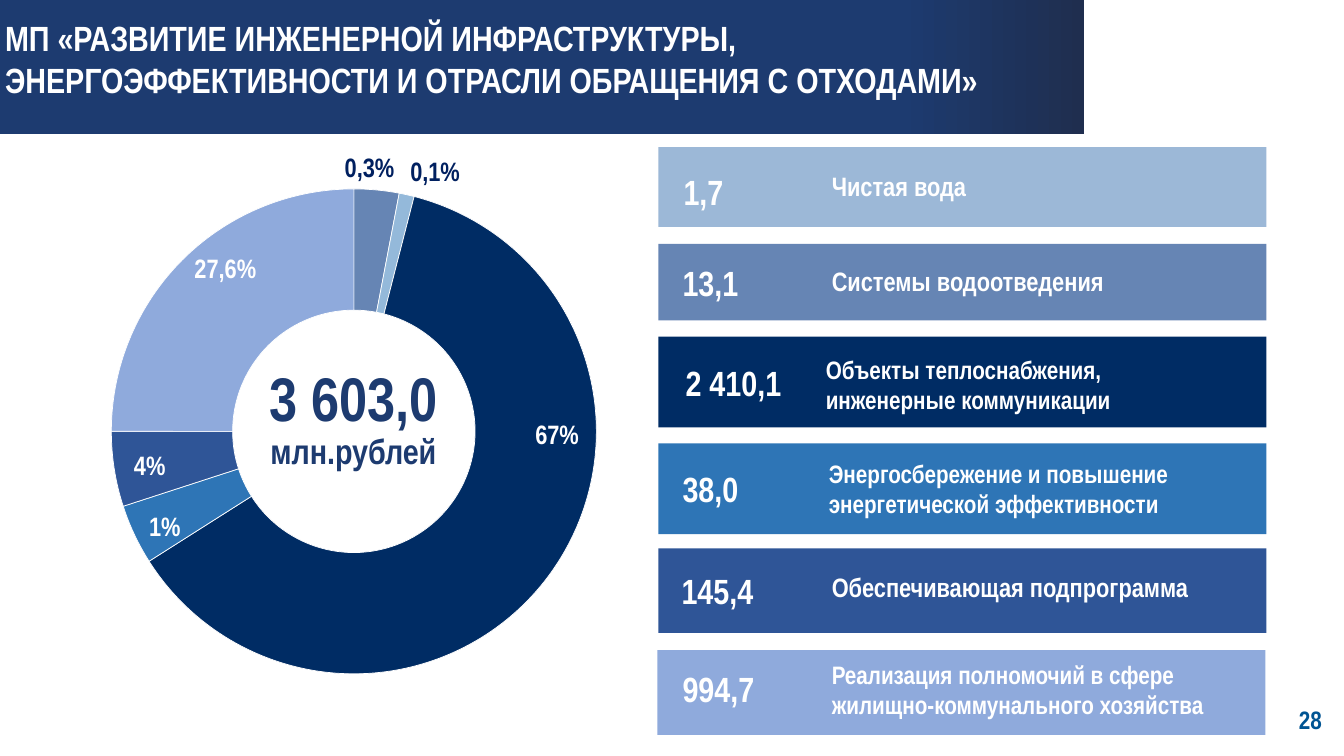
from dataclasses import dataclass

from lxml import etree
from pptx import Presentation
from pptx.chart.data import CategoryChartData
from pptx.dml.color import RGBColor
from pptx.enum.chart import XL_CHART_TYPE as CHART
from pptx.enum.shapes import MSO_SHAPE as SHAPE
from pptx.enum.text import MSO_ANCHOR as ANCHOR, PP_ALIGN as ALIGN
from pptx.util import Inches, Pt


@dataclass(frozen=True)
class Theme:
    font: str = "Arial Narrow"
    chart_font: str = "Calibri"
    white: str = "FFFFFF"
    blue: str = "1D3B70"
    shade: str = "1F2E4F"
    ink: str = "002060"
    page: str = "005493"
    mist: str = "9CB8D7"
    sky: str = "94B9DA"
    steel: str = "6685B4"
    navy: str = "002C64"
    azure: str = "2E75B6"
    royal: str = "2F5597"
    lilac: str = "8FAADC"
    total: int = 44
    head: int = 25
    label: int = 19
    small: int = 18


T = Theme()
rgb = RGBColor.from_string


def put_text(text, box, size=T.label, color=T.white, align=ALIGN.LEFT,
             anchor=ANCHOR.TOP, wrap=True, sp=None):
    x, y, w, h = map(Inches, box)
    if sp is None:
        sp = slide.shapes.add_textbox(x, y, w, h)
    sp.left, sp.top, sp.width, sp.height = x, y, w, h
    tf = sp.text_frame
    tf.word_wrap = wrap
    tf.vertical_anchor = anchor
    tf.margin_left = tf.margin_right = tf.margin_top = tf.margin_bottom = Inches(0.05)
    tf.text = text
    for p in tf.paragraphs:
        p.alignment = align
        p.space_before = Pt(0)
        for r in p.runs:
            r.font.name = T.font
            r.font.size = Pt(size)
            r.font.bold = True
            r.font.color.rgb = rgb(color)


def add_bar(x, y, w, h):
    sp = slide.shapes.add_shape(SHAPE.RECTANGLE, Inches(x), Inches(y), Inches(w), Inches(h))
    sp.shadow.inherit = False
    sp.line.fill.background()
    return sp


prs = Presentation()
prs.slide_width, prs.slide_height = Inches(13.33), Inches(7.5)
slide = prs.slides.add_slide(prs.slide_layouts[5])

banner = add_bar(0, 0, 10.75, 1.33)
banner.fill.gradient()
banner.fill.gradient_angle = 0
for stop, position, color in zip(banner.fill.gradient_stops, (0.83, 1), (T.blue, T.shade)):
    stop.position = position
    stop.color.rgb = rgb(color)

title = slide.shapes.title
banner.element.addnext(title.element)
put_text("МП «РАЗВИТИЕ ИНЖЕНЕРНОЙ ИНФРАСТРУКТУРЫ,\n"
         "ЭНЕРГОЭФФЕКТИВНОСТИ И ОТРАСЛИ ОБРАЩЕНИЯ С ОТХОДАМИ»",
         (0, 0.11, 13.23, 0.94), T.head, sp=title)

data = CategoryChartData()
data.categories = ["1", "2", "3", "4", "5", "6"]
data.add_series("Series 1", (3, 1, 62, 4, 5, 25))
chart = slide.shapes.add_chart(CHART.DOUGHNUT, Inches(1.08), Inches(1.85),
                               Inches(4.86), Inches(4.86), data).chart
chart.has_legend = False
chart.has_title = False
chart.font.name = T.chart_font
chart.font.size = Pt(10)
chart.font.color.rgb = rgb(T.white)
plot = chart.plots[0]
plot.vary_by_categories = True
for i, color in enumerate((T.steel, T.sky, T.navy, T.azure, T.royal, T.lilac)):
    fmt = plot.series[0].points[i].format
    fmt.fill.solid()
    fmt.fill.fore_color.rgb = rgb(color)
    fmt.line.color.rgb = rgb(T.white)
    fmt.line.width = Pt(0.5)

area = chart.element.find(".//{*}plotArea")
area.find(".//{*}holeSize").set("val", "70")
for old in area.findall("{*}layout"):
    area.remove(old)
ns = "{http://schemas.openxmlformats.org/drawingml/2006/chart}"
layout = etree.Element(ns + "layout")
manual = etree.SubElement(layout, ns + "manualLayout")
for tag, val in (("layoutTarget", "inner"), ("xMode", "edge"), ("yMode", "edge"),
                 ("x", "0.005"), ("y", "0.005"), ("w", "0.99"), ("h", "0.99")):
    etree.SubElement(manual, ns + tag).set("val", val)
area.insert(0, layout)

put_text("3 603,0", (1.83, 3.52, 3.35, 0.84), T.total, T.blue, ALIGN.CENTER)
put_text("млн.рублей", (1.83, 4.21, 3.35, 0.52), T.head, T.blue, ALIGN.CENTER)

shares = (
    ("67%", 5.12, 4.1, T.white),
    ("1%", 1.23, 5.01, T.white),
    ("4%", 1.08, 4.4, T.white),
    ("27,6%", 1.83, 2.45, T.white),
    ("0,3%", 3.26, 1.45, T.ink),
    ("0,1%", 3.91, 1.49, T.ink),
)
for share, x, y, color in shares:
    put_text(share, (x, y, 0.81, 0.42), color=color, align=ALIGN.CENTER)

programmes = (
    (6.53, 1.46, 0.79, T.mist, "1,7", 6.73, 1.64,
     "Чистая вода", 8.2, 1.45, 0.79, T.label),
    (6.53, 2.42, 0.76, T.steel, "13,1", 6.72, 2.54,
     "Системы водоотведения", 8.2, 2.48, 0.61, T.label),
    (6.53, 3.34, 0.9, T.navy, "2 410,1", 6.75, 3.53,
     "Объекты теплоснабжения, инженерные коммуникации", 8.14, 3.36, 0.91, T.small),
    (6.53, 4.4, 0.9, T.azure, "38,0", 6.72, 4.59,
     "Энергосбережение и повышение энергетической эффективности", 8.17, 4.39, 0.91, T.small),
    (6.53, 5.44, 0.84, T.royal, "145,4", 6.71, 5.6,
     "Обеспечивающая подпрограмма", 8.2, 5.53, 0.58, T.label),
    (6.52, 6.45, 0.84, T.lilac, "994,7", 6.72, 6.57,
     "Реализация полномочий в сфере жилищно-коммунального хозяйства", 8.2, 6.55, 0.58, T.small),
)
for x, y, h, color, amount, ax, ay, name, nx, ny, nh, size in programmes:
    bar = add_bar(x, y, 6.03, h)
    bar.fill.solid()
    bar.fill.fore_color.rgb = rgb(color)
    put_text(amount, (ax, ay, 1.07, 0.52), T.head, anchor=ANCHOR.MIDDLE)
    put_text(name, (nx, ny, 4.11, nh), size, anchor=ANCHOR.MIDDLE)

put_text("28", (12.82, 6.94, 0.34, 0.39), T.small, T.page, ALIGN.RIGHT, wrap=False)

prs.save("out.pptx")
